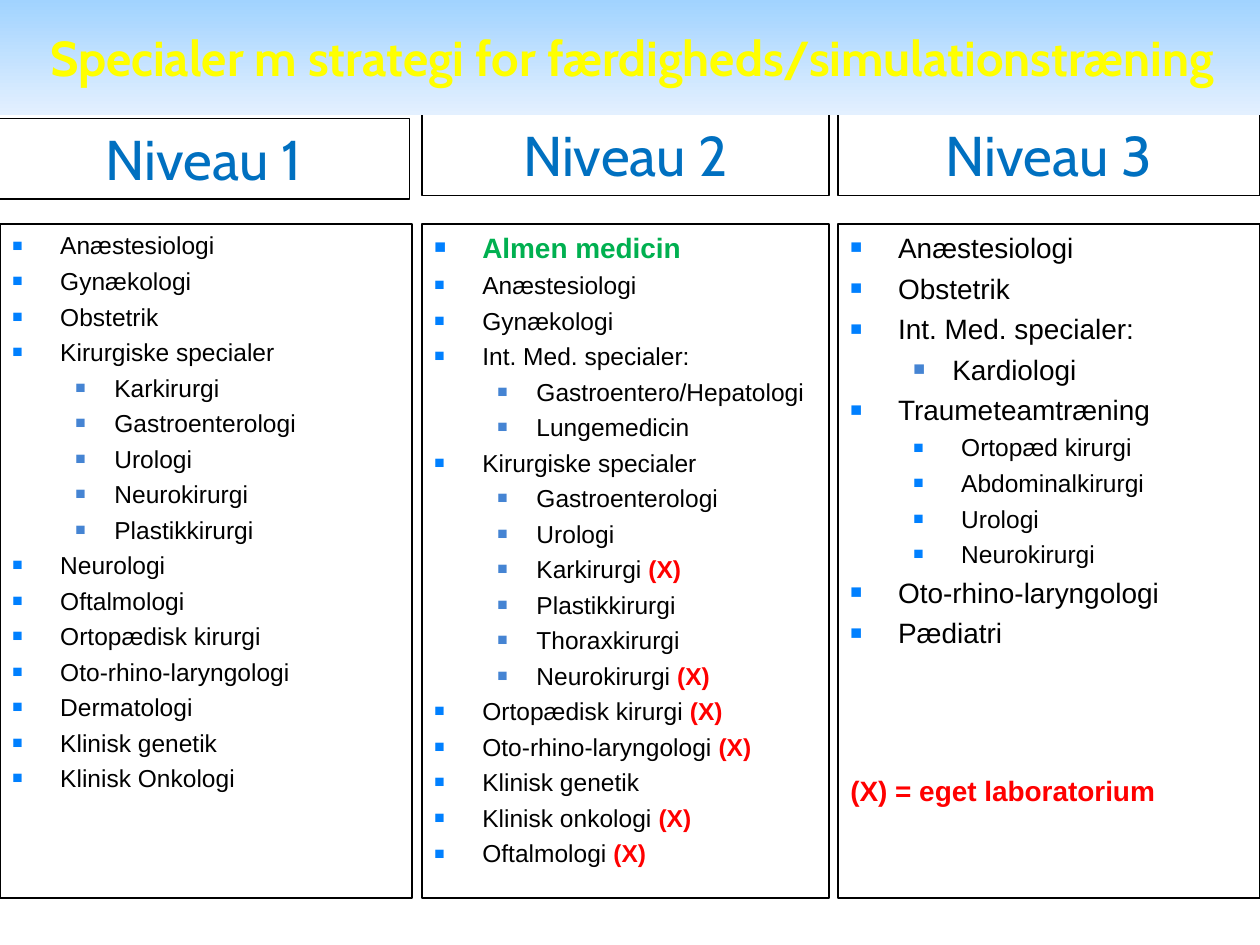
import pptx
import pptx.util
import pptx.dml.color
import pptx.enum.shapes
import pptx.enum.text
import pptx.oxml.ns
import lxml.etree

Inches = pptx.util.Inches
Pt = pptx.util.Pt

COLORS = {
    "black": "000000", "white": "FFFFFF", "title": "FFFF00", "heading": "0070C0",
    "highlight": "00B050", "mark": "FF0000", "bullet": "0080FF", "sub_bullet": "4584D3",
    "band_top": "A1D3FF", "band_bottom": "E3F0FF",
}
TITLE = "Specialer m strategi for færdigheds/simulationstræning"
MARK = "(X)"

STYLES = {
    "main": {"level": 0, "left": 0.38, "hang": 0.38, "bullet": "bullet", "size": 14},
    "sub": {"level": 1, "left": 0.81, "hang": 0.31, "bullet": "sub_bullet", "size": 14},
    "team": {"level": 1, "left": 0.88, "hang": 0.38, "bullet": "bullet", "size": 14},
}
STYLES["large"] = {**STYLES["main"], "size": 16}
STYLES["large_sub"] = {**STYLES["sub"], "size": 16}
STYLES["highlight"] = {**STYLES["large"], "color": "highlight", "bold": True}
STYLES["legend"] = {"level": 0, "left": 0, "hang": 0, "bullet": None, "size": 16,
                    "color": "mark", "bold": True, "before": 71}

COLUMNS = [
    {"heading": "Niveau 1", "heading_box": (-0.02, 0.94, 3.27), "left": 0, "width": 3.27,
     "groups": [
         ("main", ["Anæstesiologi", "Gynækologi", "Obstetrik", "Kirurgiske specialer"]),
         ("sub", ["Karkirurgi", "Gastroenterologi", "Urologi", "Neurokirurgi",
                  "Plastikkirurgi"]),
         ("main", ["Neurologi", "Oftalmologi", "Ortopædisk kirurgi",
                   "Oto-rhino-laryngologi", "Dermatologi", "Klinisk genetik",
                   "Klinisk Onkologi"]),
     ]},
    {"heading": "Niveau 2", "heading_box": (3.35, 0.91, 3.23), "left": 3.35, "width": 3.23,
     "groups": [
         ("highlight", ["Almen medicin"]),
         ("main", ["Anæstesiologi", "Gynækologi", "Int. Med. specialer:"]),
         ("sub", ["Gastroentero/Hepatologi", "Lungemedicin"]),
         ("main", ["Kirurgiske specialer"]),
         ("sub", ["Gastroenterologi", "Urologi", "Karkirurgi (X)", "Plastikkirurgi",
                  "Thoraxkirurgi", "Neurokirurgi (X)"]),
         ("main", ["Ortopædisk kirurgi (X)", "Oto-rhino-laryngologi (X)", "Klinisk genetik",
                   "Klinisk onkologi (X)", "Oftalmologi (X)"]),
     ]},
    {"heading": "Niveau 3", "heading_box": (6.65, 0.91, 3.35), "left": 6.65, "width": 3.35,
     "groups": [
         ("large", ["Anæstesiologi", "Obstetrik", "Int. Med. specialer:"]),
         ("large_sub", ["Kardiologi"]),
         ("large", ["Traumeteamtræning"]),
         ("team", ["Ortopæd kirurgi", "Abdominalkirurgi", "Urologi", "Neurokirurgi"]),
         ("large", ["Oto-rhino-laryngologi", "Pædiatri"]),
         ("legend", ["(X) = eget laboratorium"]),
     ]},
]


def rgb(name):
    return pptx.dml.color.RGBColor.from_string(COLORS[name])


def add_box(slide, left, top, width, height, fill=None, line_width=None):
    shape = slide.shapes.add_shape(pptx.enum.shapes.MSO_SHAPE.RECTANGLE, Inches(left),
                                   Inches(top), Inches(width), Inches(height))
    shape.shadow.inherit = False
    if fill:
        shape.fill.solid()
        shape.fill.fore_color.rgb = rgb(fill)
    else:
        shape.fill.background()
    if line_width:
        shape.line.color.rgb = rgb("black")
        shape.line.width = Pt(line_width)
    else:
        shape.line.fill.background()
    shape.text_frame.word_wrap = True
    shape.text_frame.vertical_anchor = pptx.enum.text.MSO_ANCHOR.TOP
    return shape


def format_run(run, size, font, color, bold=False):
    run.font.size = Pt(size)
    run.font.name = font
    run.font.color.rgb = rgb(color)
    run.font.bold = bold


def set_centered_text(shape, text, size, color, bold=False):
    paragraph = shape.text_frame.paragraphs[0]
    paragraph.text = text
    paragraph.alignment = pptx.enum.text.PP_ALIGN.CENTER
    format_run(paragraph.runs[0], size, "Cabin", color, bold)


def set_bullet(paragraph, style):
    properties = paragraph._p.get_or_add_pPr()
    properties.set("marL", str(Inches(style["left"])))
    properties.set("indent", str(-Inches(style["hang"])))

    def add(parent, tag, **attributes):
        return lxml.etree.SubElement(parent, pptx.oxml.ns.qn(tag), attributes)

    if style["bullet"]:
        add(add(properties, "a:buClr"), "a:srgbClr", val=COLORS[style["bullet"]])
        add(properties, "a:buSzPct", val="70000")
        add(properties, "a:buFont", typeface="Arial")
        add(properties, "a:buChar", char="■")
    else:
        add(properties, "a:buNone")


def fill_list(text_frame, groups):
    items = [(STYLES[name], text) for name, texts in groups for text in texts]
    for index, (style, text) in enumerate(items):
        paragraph = text_frame.add_paragraph() if index else text_frame.paragraphs[0]
        paragraph.level = style["level"]
        paragraph.alignment = pptx.enum.text.PP_ALIGN.LEFT
        paragraph.space_before = Pt(style.get("before", style["size"] / 4) if index else 0)
        set_bullet(paragraph, style)
        marked = text.endswith(MARK)
        run = paragraph.add_run()
        run.text = text.removesuffix(MARK)
        format_run(run, style["size"], "Arial", style.get("color", "black"),
                   style.get("bold", False))
        if marked:
            run = paragraph.add_run()
            run.text = MARK
            format_run(run, style["size"], "Arial", "mark", True)


def main():
    presentation = pptx.Presentation()
    presentation.slide_width = Inches(10)
    presentation.slide_height = Inches(7.5)
    slide = presentation.slides.add_slide(presentation.slide_layouts[6])

    for column in COLUMNS:
        body = add_box(slide, column["left"], 1.78, column["width"], 5.35, "white", 1)
        fill_list(body.text_frame, column["groups"])
        left, top, width = column["heading_box"]
        heading = add_box(slide, left, top, width, 0.64, line_width=0.75)
        set_centered_text(heading, column["heading"], 32, "heading")

    band = add_box(slide, 0, 0, 10.03, 0.91)
    band.fill.gradient()
    band.fill.gradient_angle = 270
    for stop, color in zip(band.fill.gradient_stops, ("band_top", "band_bottom")):
        stop.color.rgb = rgb(color)
    band.text_frame.vertical_anchor = pptx.enum.text.MSO_ANCHOR.MIDDLE
    set_centered_text(band, TITLE, 28, "title", True)

    presentation.save("out.pptx")


if __name__ == "__main__":
    main()
